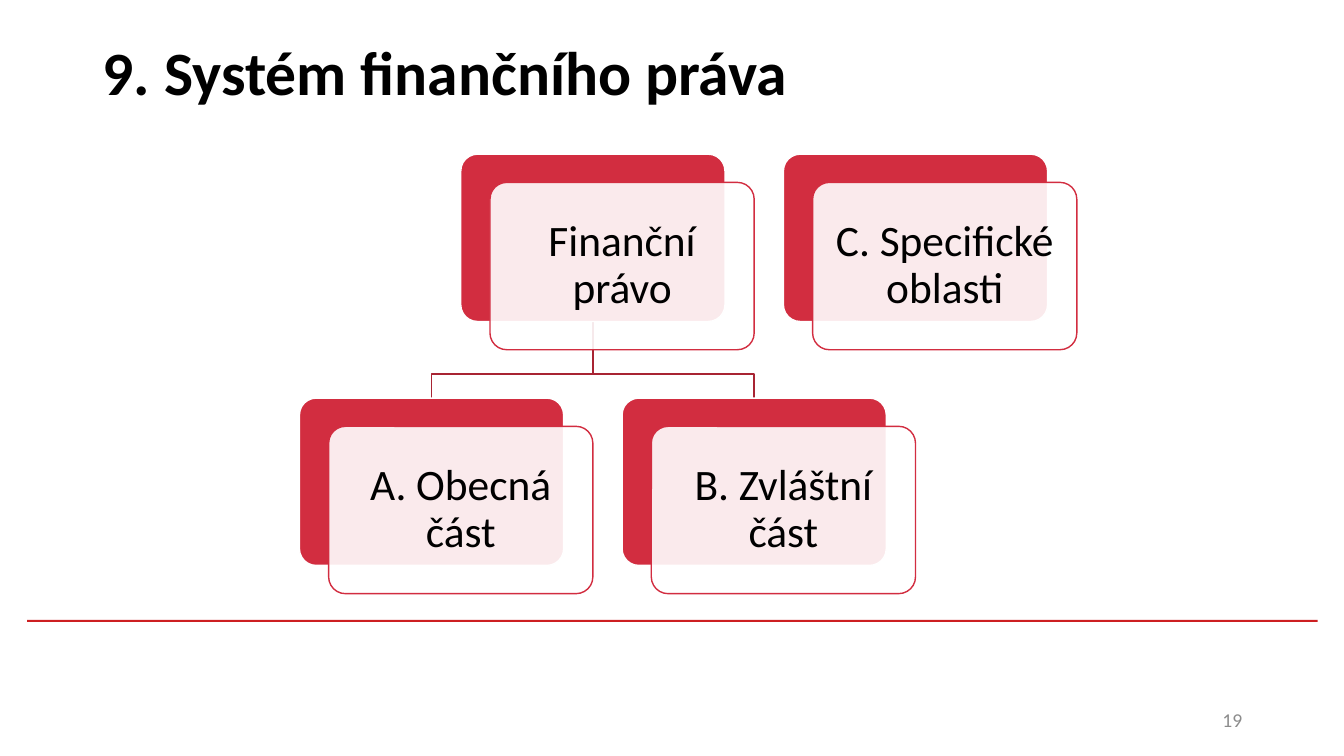
from lxml import etree
from pptx import Presentation
from pptx.dml.color import RGBColor
from pptx.enum.shapes import MSO_SHAPE
from pptx.enum.text import MSO_ANCHOR, PP_ALIGN
from pptx.oxml.ns import qn
from pptx.util import Inches, Pt

RED, DARK_RED, RULE_RED = "D22D40", "A82433", "CD1F21"
WHITE, BLACK, GREY = "FFFFFF", "000000", "8C8C8C"
NODE_WIDTH, NODE_HEIGHT = 2.62, 1.66
CARD_OFFSET_X, CARD_OFFSET_Y = 0.29, 0.28
COLUMN_STEP, ROW_STEP = 3.2, 2.42


def color(hex_string):
    return RGBColor.from_string(hex_string)


def write(shape, text, size, font_color, align, bold=False, inset=(0.1, 0.05)):
    frame = shape.text_frame
    frame.word_wrap = True
    frame.vertical_anchor = MSO_ANCHOR.MIDDLE
    frame.margin_left = frame.margin_right = Inches(inset[0])
    frame.margin_top = frame.margin_bottom = Inches(inset[1])
    paragraph = frame.paragraphs[0]
    paragraph.alignment = align
    paragraph.line_spacing = 0.9
    run = paragraph.add_run()
    run.text = text
    run.font.name = "Calibri"
    run.font.size = Pt(size)
    run.font.bold = bold
    run.font.color.rgb = color(font_color)


def add_text(slide, box, *style, **options):
    text_box = slide.shapes.add_textbox(*map(Inches, box))
    write(text_box, *style, **options)


def add_box(slide, preset, box, fill, line=None, opacity=None):
    shape = slide.shapes.add_shape(preset, *map(Inches, box))
    shape.shadow.inherit = False
    shape.fill.solid()
    shape.fill.fore_color.rgb = color(fill)
    if opacity is not None:
        fill_color = shape.fill._xPr.find(".//" + qn("a:srgbClr"))
        etree.SubElement(fill_color, qn("a:alpha"), val=str(opacity * 1000))
    if line:
        shape.line.color.rgb = color(line)
        shape.line.width = Pt(1)
    else:
        shape.line.fill.background()
    return shape


def add_node(slide, left, top, text):
    """Red plate with a translucent card shifted down and right."""
    plate = add_box(slide, MSO_SHAPE.ROUNDED_RECTANGLE,
                    (left, top, NODE_WIDTH, NODE_HEIGHT), RED, WHITE)
    card = add_box(slide, MSO_SHAPE.ROUNDED_RECTANGLE,
                   (left + CARD_OFFSET_X, top + CARD_OFFSET_Y, NODE_WIDTH, NODE_HEIGHT),
                   WHITE, RED, opacity=90)
    for shape in (plate, card):
        shape.adjustments[0] = 0.1
    write(card, text, 31, BLACK, PP_ALIGN.CENTER, inset=(0.13, 0.13))


def add_branch(slide, parent, child):
    """Elbow line from the bottom of the parent plate to the top of the child."""
    start_x, start_y = parent[0] + NODE_WIDTH / 2, parent[1] + NODE_HEIGHT
    end_x, end_y = child[0] + NODE_WIDTH / 2, child[1]
    bend_y = end_y - 0.24
    builder = slide.shapes.build_freeform(Inches(start_x), Inches(start_y))
    corners = [(start_x, bend_y), (end_x, bend_y), (end_x, end_y)]
    builder.add_line_segments([(Inches(x), Inches(y)) for x, y in corners], close=False)
    branch = builder.convert_to_shape()
    branch.shadow.inherit = False
    branch.fill.background()
    branch.line.color.rgb = color(DARK_RED)
    branch.line.width = Pt(1)


def add_hierarchy(slide, left, top):
    """Two top nodes, the first one branching into two lower nodes."""
    root = (left + COLUMN_STEP / 2, top)
    separate = (root[0] + COLUMN_STEP, top)
    children = [(left + column * COLUMN_STEP, top + ROW_STEP) for column in range(2)]
    for child in reversed(children):
        add_branch(slide, root, child)
    labels = ["Finanční právo", "A. Obecná část", "B. Zvláštní část", "C. Specifické oblasti"]
    for (node_left, node_top), label in zip([root, *children, separate], labels):
        add_node(slide, node_left, node_top, label)


def main():
    presentation = Presentation()
    presentation.slide_width = Inches(13.33)
    presentation.slide_height = Inches(7.5)
    slide = presentation.slides.add_slide(presentation.slide_layouts[6])

    # Rule above the footer
    add_box(slide, MSO_SHAPE.RECTANGLE, (0.27, 6.15, 12.8, 0.02), RULE_RED)
    # Title and page number
    add_text(slide, (0.92, 0.02, 11.5, 1.45), "9. Systém finančního práva",
             44, BLACK, PP_ALIGN.LEFT, bold=True)
    add_text(slide, (9.42, 6.95, 3, 0.4), "19", 14, GREY, PP_ALIGN.RIGHT)
    # Diagram
    add_hierarchy(slide, 2.97, 1.53)

    presentation.save("out.pptx")


if __name__ == "__main__":
    main()
